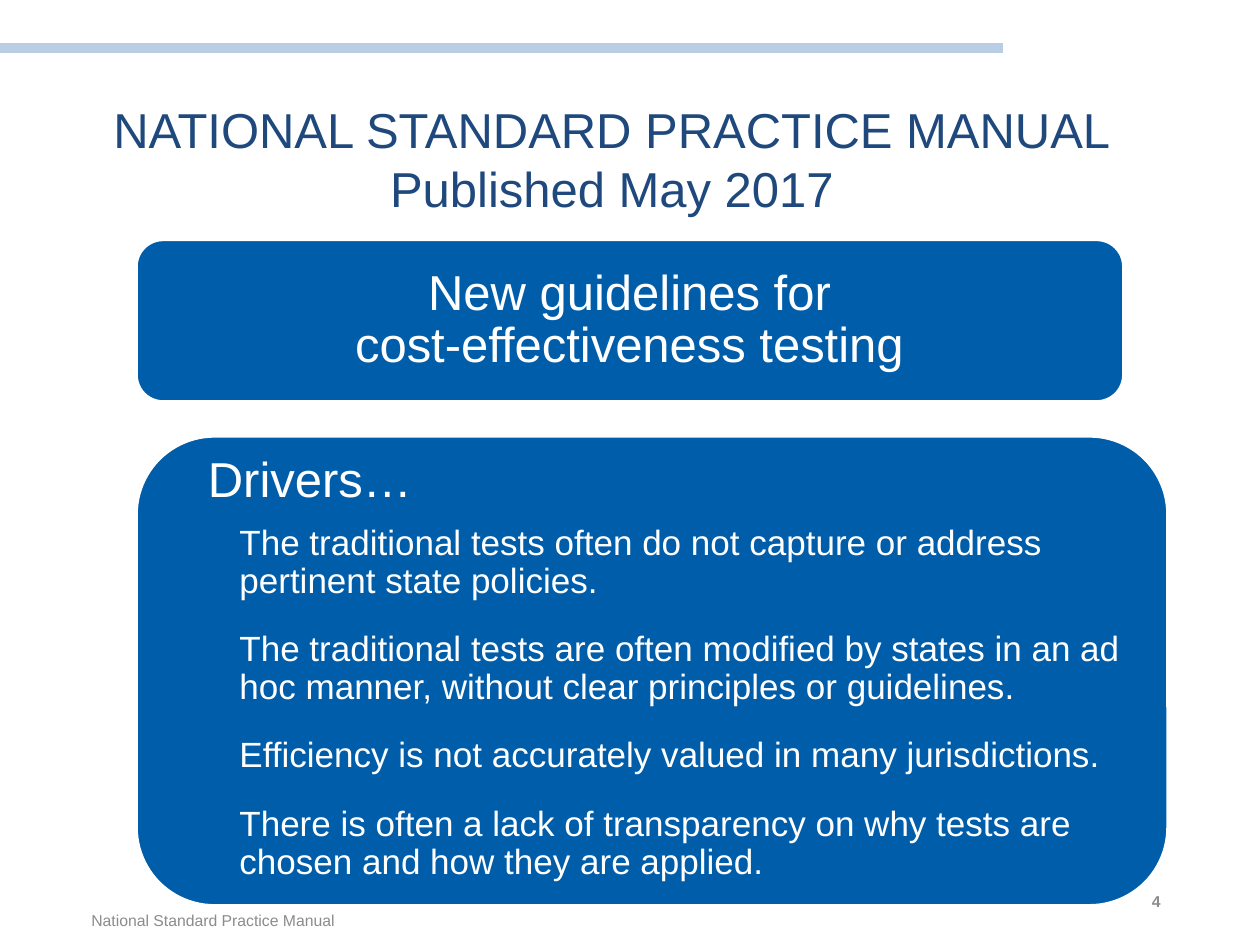
from pptx import Presentation
from pptx.dml.color import RGBColor
from pptx.enum.shapes import MSO_CONNECTOR, MSO_SHAPE
from pptx.enum.text import MSO_ANCHOR, PP_ALIGN
from pptx.oxml.ns import qn
from pptx.util import Inches, Pt
from lxml.etree import SubElement

TITLE = "NATIONAL STANDARD PRACTICE MANUAL\nPublished May 2017"
GUIDELINES = "New guidelines for\vcost-effectiveness testing"
DRIVERS_HEADING = "Drivers…"
DRIVERS = [
    "The traditional tests often do not capture or address pertinent state policies.",
    "The traditional tests are often modified by states in an ad hoc manner, without clear principles or guidelines.",
    "Efficiency is not accurately valued in many jurisdictions.",
    "There is often a lack of transparency on why tests are chosen and how they are applied.",
]
FOOTER = "National Standard Practice Manual"
PAGE_NUMBER = "4"

THEME = {
    "font": "Arial",
    "rule": RGBColor(0xB9, 0xCD, 0xE5),
    "title": RGBColor(0x1F, 0x49, 0x7D),
    "panel": RGBColor(0x00, 0x5D, 0xAA),
    "white": RGBColor(0xFF, 0xFF, 0xFF),
    "footer": RGBColor(0x8C, 0x8C, 0x8C),
    "heading_size": Pt(28),
    "driver_size": Pt(20),
    "footer_size": Pt(9),
}
PANEL_INSET = 0.12

presentation = Presentation()
presentation.slide_width, presentation.slide_height = Inches(10), Inches(7.5)
slide = presentation.slides.add_slide(presentation.slide_layouts[6])


def style(paragraph, size, color, bold=False):
    for font in (paragraph.font, *(run.font for run in paragraph.runs)):
        font.name = THEME["font"]
        font.size = size
        font.bold = bold
        font.color.rgb = color


def add_text(box, text, size, color, align, bold=False, inset=None, anchor=MSO_ANCHOR.MIDDLE):
    frame = slide.shapes.add_textbox(*map(Inches, box)).text_frame
    frame.word_wrap = True
    frame.vertical_anchor = anchor
    if inset is not None:
        frame.margin_left = frame.margin_right = Inches(inset)
        frame.margin_top = frame.margin_bottom = Inches(inset)
    frame.text = text
    for paragraph in frame.paragraphs:
        paragraph.alignment = align
        style(paragraph, size, color, bold)
    return frame


def add_panel(box):
    panel = slide.shapes.add_shape(MSO_SHAPE.ROUNDED_RECTANGLE, *map(Inches, box))
    panel.shadow.inherit = False
    panel.fill.solid()
    panel.fill.fore_color.rgb = THEME["panel"]
    panel.line.color.rgb = THEME["white"]
    panel.line.width = Pt(2)


rule = slide.shapes.add_connector(
    MSO_CONNECTOR.STRAIGHT, Inches(-0.06), Inches(0.38), Inches(7.96), Inches(0.38))
rule.line.color.rgb = THEME["rule"]
rule.line.width = Pt(6)
SubElement(rule._element.spPr, qn("a:effectLst"))

add_text((-0.1, 0.58, 9.91, 1.35), TITLE, THEME["heading_size"], THEME["title"], PP_ALIGN.CENTER)

add_panel((1.08, 1.9, 7.84, 1.29))
guidelines = add_text((1.15, 1.96, 7.69, 1.17), GUIDELINES, THEME["heading_size"],
                      THEME["white"], PP_ALIGN.CENTER, inset=PANEL_INSET)
guidelines.paragraphs[0].line_spacing = 0.9

add_panel((1.08, 3.46, 8.19, 3.73))
drivers = add_text((1.53, 3.49, 7.92, 3.7), DRIVERS_HEADING, THEME["heading_size"],
                   THEME["white"], PP_ALIGN.LEFT, inset=PANEL_INSET, anchor=MSO_ANCHOR.TOP)
drivers.paragraphs[0].line_spacing = 0.9
drivers.paragraphs[0].space_after = Pt(10)
for driver in DRIVERS:
    paragraph = drivers.add_paragraph()
    paragraph.text = driver
    paragraph.line_spacing = 0.9
    paragraph.space_after = Pt(17.5)
    paragraph._p.get_or_add_pPr().set("marL", str(Inches(0.25)))
    style(paragraph, THEME["driver_size"], THEME["white"])

add_text((0, 7.1, 3.38, 0.4), FOOTER, THEME["footer_size"], THEME["footer"], PP_ALIGN.CENTER)
add_text((7.06, 6.95, 2.25, 0.4), PAGE_NUMBER, THEME["footer_size"], THEME["footer"],
         PP_ALIGN.RIGHT, bold=True)

presentation.save("out.pptx")
